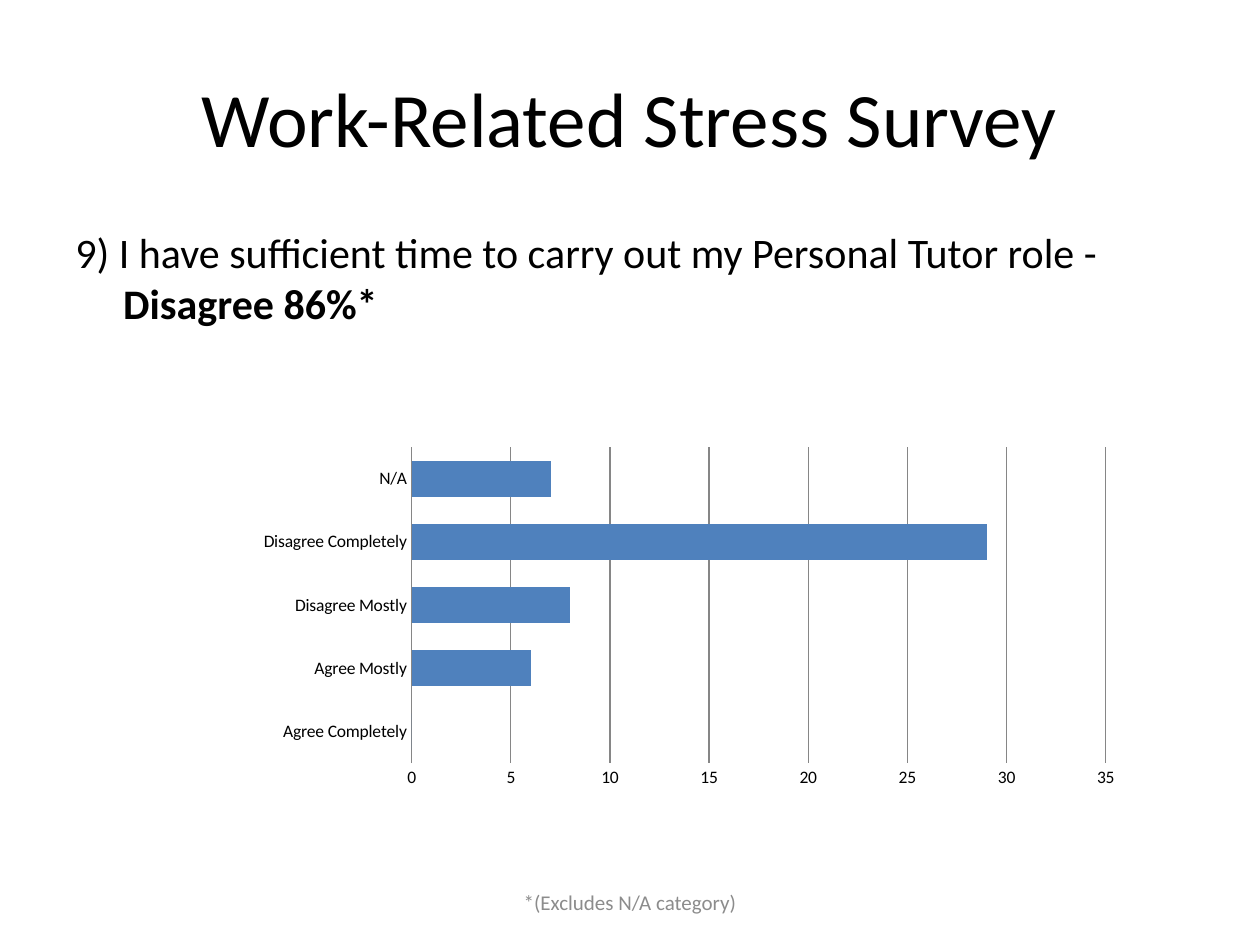
import lxml.etree
import pptx
import pptx.chart.data
import pptx.dml.color
import pptx.enum.chart
import pptx.enum.text
import pptx.oxml
import pptx.oxml.ns
import pptx.util

BLACK = pptx.dml.color.RGBColor(0x00, 0x00, 0x00)
GREY = pptx.dml.color.RGBColor(0x8C, 0x8C, 0x8C)
GRID_GREY = pptx.dml.color.RGBColor(0x86, 0x86, 0x86)
BLUE = pptx.dml.color.RGBColor(0x4F, 0x81, 0xBD)
FONT = "Calibri"
RESPONSES = {
    "Agree Completely": 0,
    "Agree Mostly": 6,
    "Disagree Mostly": 8,
    "Disagree Completely": 29,
    "N/A": 7,
}


def add_run(paragraph, text, size=24, color=BLACK, bold=False):
    run = paragraph.add_run()
    run.text = text
    run.font.name = FONT
    run.font.size = pptx.util.Pt(size)
    run.font.bold = bold
    run.font.color.rgb = color


class SurveySlide:
    """Survey slide whose lengths are shares of the slide's size."""

    def __init__(self, deck):
        self.width, self.height = deck.slide_width, deck.slide_height
        self.slide = deck.slides.add_slide(deck.slide_layouts[6])

    def frame(self, left, top, width, height):
        return (
            round(left * self.width),
            round(top * self.height),
            round(width * self.width),
            round(height * self.height),
        )

    def paragraph(self, share, anchor=pptx.enum.text.MSO_ANCHOR.MIDDLE,
                  align=pptx.enum.text.PP_ALIGN.CENTER):
        text_frame = self.slide.shapes.add_textbox(*self.frame(*share)).text_frame
        text_frame.word_wrap = True
        text_frame.vertical_anchor = anchor
        paragraph = text_frame.paragraphs[0]
        paragraph.alignment = align
        return paragraph

    def label(self, text, share, **style):
        add_run(self.paragraph(share), text, **style)

    def question(self, text, finding, share, hang=0.38):
        paragraph = self.paragraph(
            share, pptx.enum.text.MSO_ANCHOR.TOP, pptx.enum.text.PP_ALIGN.LEFT
        )
        paragraph.space_before = pptx.util.Pt(4.8)
        indent = pptx.util.Inches(hang)
        properties = paragraph._p.get_or_add_pPr()
        properties.set("marL", str(indent))
        properties.set("indent", str(-indent))
        add_run(paragraph, text)
        add_run(paragraph, finding, bold=True)

    def bar_chart(self, responses, share, plot):
        data = pptx.chart.data.CategoryChartData()
        data.categories = list(responses)
        data.add_series("Series 1", list(responses.values()))
        chart = self.slide.shapes.add_chart(
            pptx.enum.chart.XL_CHART_TYPE.BAR_CLUSTERED, *self.frame(*share), data
        ).chart
        chart.has_legend = False
        chart.has_title = False
        chart.font.name = FONT
        chart.font.size = pptx.util.Pt(10)
        chart.font.color.rgb = BLACK

        bars = chart.plots[0]
        bars.vary_by_categories = False
        bars.gap_width = 75
        bars.overlap = -25
        fill = bars.series[0].format.fill
        fill.solid()
        fill.fore_color.rgb = BLUE

        for axis in (chart.category_axis, chart.value_axis):
            axis.major_tick_mark = pptx.enum.chart.XL_TICK_MARK.NONE
            axis.minor_tick_mark = pptx.enum.chart.XL_TICK_MARK.NONE
        chart.category_axis.format.line.color.rgb = GRID_GREY
        scale = chart.value_axis
        scale.minimum_scale, scale.maximum_scale, scale.major_unit = 0, 35, 5
        scale.format.line.fill.background()
        scale.has_major_gridlines = True
        scale.major_gridlines.format.line.color.rgb = GRID_GREY
        self.place_plot(chart, plot)

    def place_plot(self, chart, plot):
        qn = pptx.oxml.ns.qn
        area = chart._chartSpace.find(".//" + qn("c:plotArea"))
        layout = area.find(qn("c:layout"))
        if layout is None:
            layout = pptx.oxml.parse_xml(f"<c:layout {pptx.oxml.ns.nsdecls('c')}/>")
            area.insert(0, layout)
        manual = lxml.etree.SubElement(layout, qn("c:manualLayout"))
        settings = [("layoutTarget", "inner"), ("xMode", "edge"), ("yMode", "edge")]
        for tag, value in settings + list(zip("xywh", plot)):
            lxml.etree.SubElement(manual, qn(f"c:{tag}")).set("val", str(value))


def main():
    deck = pptx.Presentation()
    deck.slide_width = pptx.util.Inches(10)
    deck.slide_height = pptx.util.Inches(7.5)
    survey = SurveySlide(deck)
    survey.label("Work-Related Stress Survey", (0.05, 0.04, 0.9, 1 / 6), size=44)
    survey.question(
        "9) I have sufficient time to carry out my Personal Tutor role - ",
        "Disagree 86%*",
        (0.05, 7 / 30, 0.9, 0.66),
    )
    survey.bar_chart(RESPONSES, (0.1, 0.46, 0.81, 0.44), (0.28, 0.03, 0.68, 0.76))
    survey.label(
        "*(Excludes N/A category)", (0.34, 0.93, 0.32, 0.05), size=12, color=GREY
    )
    deck.save("out.pptx")


if __name__ == "__main__":
    main()
